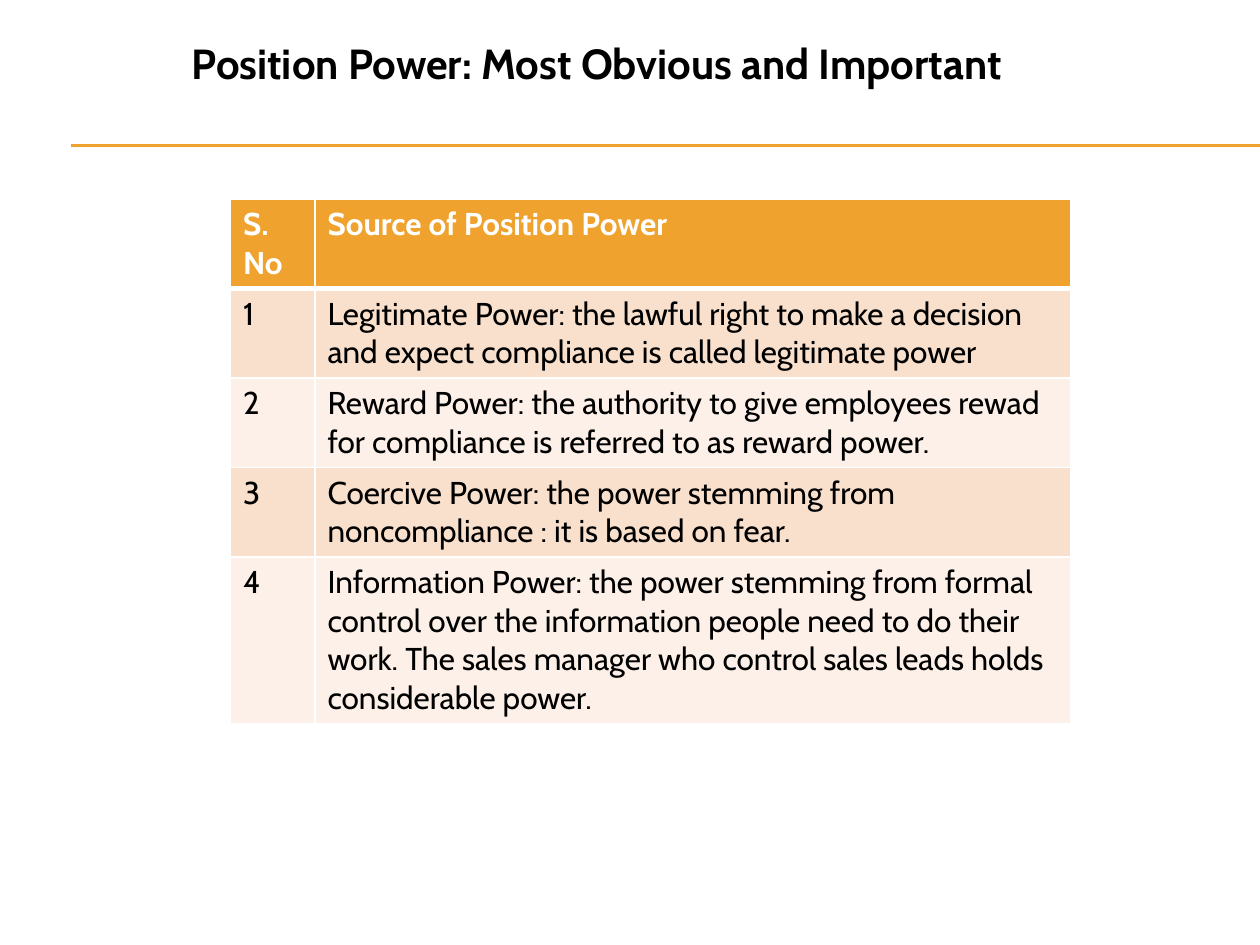
from lxml import etree
from pptx import Presentation
from pptx.dml.color import RGBColor
from pptx.enum.shapes import MSO_CONNECTOR
from pptx.enum.text import MSO_ANCHOR, MSO_AUTO_SIZE, PP_ALIGN
from pptx.oxml.ns import qn
from pptx.util import Inches, Pt

STRAIGHT = MSO_CONNECTOR.STRAIGHT
TOP, LEFT, NO_FIT = MSO_ANCHOR.TOP, PP_ALIGN.LEFT, MSO_AUTO_SIZE.NONE

ORANGE = RGBColor(0xF0, 0xA2, 0x2E)
PEACH = RGBColor(0xF9, 0xE0, 0xCD)
CREAM = RGBColor(0xFC, 0xF0, 0xE8)
WHITE = RGBColor(0xFF, 0xFF, 0xFF)
BLACK = RGBColor(0, 0, 0)

TITLE = "\tPosition Power: Most Obvious and Important"
HEADER = ("S. No", "Source of Position Power")
POWERS = [
    "Legitimate Power: the lawful right to make a decision and expect "
    "compliance is called legitimate power",
    "Reward Power: the authority to give employees rewad for compliance "
    "is referred to as reward power.",
    "Coercive Power: the power stemming from noncompliance : it is based on fear.",
    "Information Power: the power stemming from formal control over the "
    "information people need to do their work. The sales manager who control "
    "sales leads holds considerable power.",
]

SLIDE_W, SLIDE_H = 10, 7.5
RULE_LEFT, RULE_TOPS = 0.56, (1.15, 1.16)
TITLE_BOX = (0.92, 0.25, 7.52, 0.5)
TABLE_LEFT, TABLE_TOP = 1.83, 1.58
COLUMN_WIDTHS = (0.67, 6)
ROW_HEIGHTS = (0.7, 0.7, 0.7, 0.7, 1.3)


def format_font(font, **values):
    color = values.pop("color")
    for name, value in {"name": "Cabin", **values}.items():
        setattr(font, name, value)
    font.color.rgb = color


def set_borders(cell, widths):
    """Draw white borders, widths in points by side; they precede the fill."""
    properties = cell._tc.get_or_add_tcPr()
    for position, (side, width) in enumerate(widths.items()):
        border = etree.Element(qn(f"a:ln{side}"), w=str(Pt(width)))
        fill = etree.SubElement(border, qn("a:solidFill"))
        etree.SubElement(fill, qn("a:srgbClr"), val=str(WHITE))
        properties.insert(position, border)


def add_rule(slide, top):
    rule = slide.shapes.add_connector(
        STRAIGHT, Inches(RULE_LEFT), Inches(top), Inches(SLIDE_W), Inches(top))
    rule.line.color.rgb = ORANGE
    rule.line.width = Pt(0.75)
    etree.SubElement(rule._element.spPr, qn("a:effectLst"))


def add_title(slide):
    title = slide.shapes.title
    for side, length in zip(("left", "top", "width", "height"), TITLE_BOX):
        setattr(title, side, Inches(length))
    frame = title.text_frame
    frame.text = TITLE
    frame.word_wrap = True
    frame.auto_size = NO_FIT
    frame.vertical_anchor = TOP
    frame.paragraphs[0].alignment = LEFT
    format_font(frame.paragraphs[0].runs[0].font,
                size=Pt(24), bold=True, color=BLACK)


def add_power_table(slide):
    rows = [HEADER] + [(str(n), power) for n, power in enumerate(POWERS, 1)]
    table = slide.shapes.add_table(
        len(rows), len(HEADER), Inches(TABLE_LEFT), Inches(TABLE_TOP),
        Inches(sum(COLUMN_WIDTHS)), Inches(sum(ROW_HEIGHTS))).table
    for column, width in zip(table.columns, COLUMN_WIDTHS):
        column.width = Inches(width)
    for r, (row, height) in enumerate(zip(rows, ROW_HEIGHTS)):
        table.rows[r].height = Inches(height)
        is_header = r == 0
        fill = ORANGE if is_header else (CREAM, PEACH)[r % 2]
        borders = {"L": 1, "R": 1, "T": 3 if r == 1 else 1,
                   "B": 3 if is_header else 1}
        for c, text in enumerate(row):
            cell = table.cell(r, c)
            cell.text = text
            cell.fill.solid()
            cell.fill.fore_color.rgb = fill
            set_borders(cell, borders)
            format_font(cell.text_frame.paragraphs[0].runs[0].font,
                        size=Pt(18), bold=is_header,
                        color=WHITE if is_header else BLACK)


def main():
    deck = Presentation()
    deck.slide_width, deck.slide_height = Inches(SLIDE_W), Inches(SLIDE_H)
    slide = deck.slides.add_slide(deck.slide_layouts.get_by_name("Title Only"))
    for top in RULE_TOPS:
        add_rule(slide, top)
    add_title(slide)
    add_power_table(slide)
    deck.save("out.pptx")


if __name__ == "__main__":
    main()
